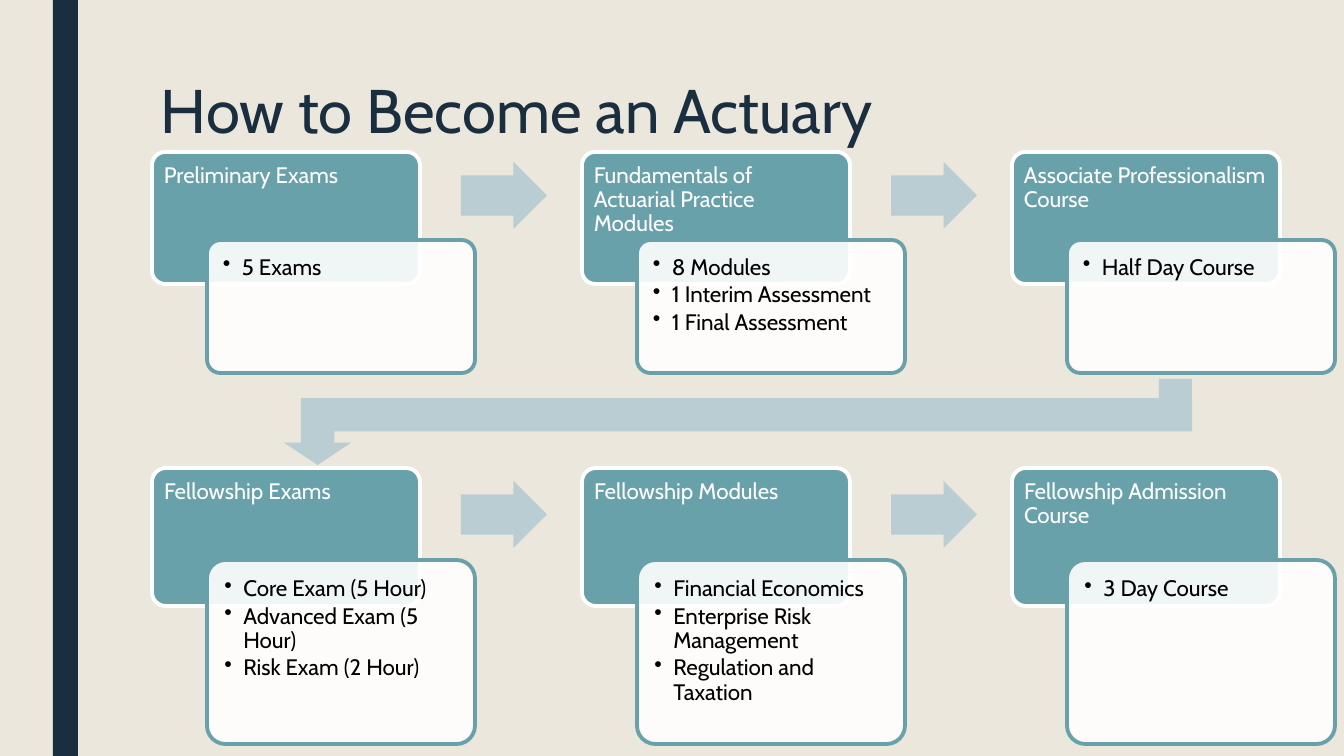
from dataclasses import dataclass

from lxml import etree
from pptx import Presentation
from pptx import util as u
from pptx.dml.color import RGBColor
from pptx.enum import shapes, text
from pptx.oxml.ns import qn

EMU_PER_PX = 12192000 / 1344


@dataclass(frozen=True)
class Theme:
    font: str = "Cabin"
    sand: str = "EBE7DD"
    navy: str = "1A2E40"
    teal: str = "69A1AB"
    mist: str = "B9CDD2"
    white: str = "FFFFFF"
    black: str = "000000"
    title_size: int = 44
    body_size: int = 16
    border: float = 2.75


def px(length):
    return u.Emu(round(length * EMU_PER_PX))


def write(frame, lines, *, font, size, color, margins, spacing=0.9, after=0, bullet_indent=0):
    """Fill a text frame; margins are left, top, right, bottom in px."""
    frame.word_wrap = True
    frame.vertical_anchor = text.MSO_ANCHOR.TOP
    (frame.margin_left, frame.margin_top,
     frame.margin_right, frame.margin_bottom) = map(px, margins)
    for index, line in enumerate(lines):
        paragraph = frame.add_paragraph() if index else frame.paragraphs[0]
        paragraph.alignment = text.PP_ALIGN.LEFT
        paragraph.line_spacing = spacing
        paragraph.space_after = u.Pt(after)
        run = paragraph.add_run()
        run.text = line
        run.font.name = font
        run.font.size = u.Pt(size)
        run.font.color.rgb = RGBColor.from_string(color)
        if bullet_indent:
            properties = paragraph._p.get_or_add_pPr()
            properties.set("marL", str(px(bullet_indent)))
            properties.set("indent", str(-px(bullet_indent)))
            etree.SubElement(properties, qn("a:buChar")).set("char", "•")


class SlideBuilder:
    def __init__(self, slide, theme):
        self.slide = slide
        self.theme = theme
        slide.background.fill.solid()
        slide.background.fill.fore_color.rgb = RGBColor.from_string(theme.sand)

    def block(self, kind, box, fill, line=None, adjustments=(), opacity=100):
        shape = self.slide.shapes.add_shape(kind, *map(px, box))
        shape.shadow.inherit = False
        shape.fill.solid()
        shape.fill.fore_color.rgb = RGBColor.from_string(fill)
        if opacity < 100:
            color = shape.fill._xPr.find(qn("a:solidFill"))[0]
            etree.SubElement(color, qn("a:alpha")).set("val", str(opacity * 1000))
        if line:
            shape.line.color.rgb = RGBColor.from_string(line)
            shape.line.width = u.Pt(self.theme.border)
        else:
            shape.line.fill.background()
        for index, value in enumerate(adjustments):
            shape.adjustments[index] = value
        return shape

    def title(self, wording, box):
        title = self.slide.shapes.add_textbox(*map(px, box))
        write(title.text_frame, [wording], font=self.theme.font, size=self.theme.title_size,
              color=self.theme.navy, margins=(10, 5, 10, 5), spacing=0.89)

    def card(self, box, lines, fill, line, color, opacity=100, **text_format):
        card = self.block(shapes.MSO_SHAPE.ROUNDED_RECTANGLE, box, fill, line, (0.1,), opacity)
        write(card.text_frame, lines, font=self.theme.font, size=self.theme.body_size,
              color=color, **text_format)

    def stage(self, heading_box, heading, details_box, details):
        t = self.theme
        self.card(heading_box, [heading], t.teal, t.white, t.white,
                  margins=(8, 8, 8, 0), after=5.6)
        self.card(details_box, details, t.white, t.teal, t.black, opacity=90,
                  margins=(12, 12, 12, 12), after=2.4, bullet_indent=19)

    def next_arrow(self, left, top):
        self.block(shapes.MSO_SHAPE.RIGHT_ARROW, (left, top, 86, 67), self.theme.mist,
                   adjustments=(0.6, 0.5))

    def return_arrow(self, box, stem_box):
        arrow = self.block(shapes.MSO_SHAPE.BENT_UP_ARROW, box, self.theme.mist,
                           adjustments=(0.5, 0.5, 0.333))
        arrow.rotation = 180
        self.block(shapes.MSO_SHAPE.RECTANGLE, stem_box, self.theme.mist)


@dataclass(frozen=True)
class Row:
    top: int
    heading_height: int
    details_top: int
    details_height: int
    arrow_top: int
    stages: tuple


ROWS = (
    Row(152, 132, 240, 133, 162, (
        ("Preliminary Exams", ["5 Exams"]),
        ("Fundamentals of Actuarial Practice Modules",
         ["8 Modules", "1 Interim Assessment", "1 Final Assessment"]),
        ("Associate Professionalism Course", ["Half Day Course"]),
    )),
    Row(468, 138, 560, 184, 481, (
        ("Fellowship Exams",
         ["Core Exam (5 Hour)", "Advanced Exam (5 Hour)", "Risk Exam (2 Hour)"]),
        ("Fellowship Modules",
         ["Financial Economics", "Enterprise Risk Management", "Regulation and Taxation"]),
        ("Fellowship Admission Course", ["3 Day Course"]),
    )),
)
FIRST_LEFT, STAGE_PITCH, CARD_WIDTH = 152, 430, 268
DETAILS_SHIFT, ARROW_SHIFT = 55, 309


def main():
    presentation = Presentation()
    presentation.slide_width, presentation.slide_height = px(1344), px(756)
    theme = Theme()
    builder = SlideBuilder(presentation.slides.add_slide(presentation.slide_layouts[6]), theme)

    # Side band and title
    builder.block(shapes.MSO_SHAPE.RECTANGLE, (53, 0, 25, 756), theme.navy)
    builder.title("How to Become an Actuary", (151, 76, 1058, 163))

    # Two rows of stages, joined by arrows
    for row in ROWS:
        for column, (heading, details) in enumerate(row.stages):
            left = FIRST_LEFT + column * STAGE_PITCH
            builder.stage(
                (left, row.top, CARD_WIDTH, row.heading_height), heading,
                (left + DETAILS_SHIFT, row.details_top, CARD_WIDTH, row.details_height), details)
            if column < len(row.stages) - 1:
                builder.next_arrow(left + ARROW_SHIFT, row.arrow_top)

    # Arrow from the first row back to the start of the second
    builder.return_arrow((284, 398, 908, 67), (1159, 379, 33, 52))

    presentation.save("out.pptx")


if __name__ == "__main__":
    main()
